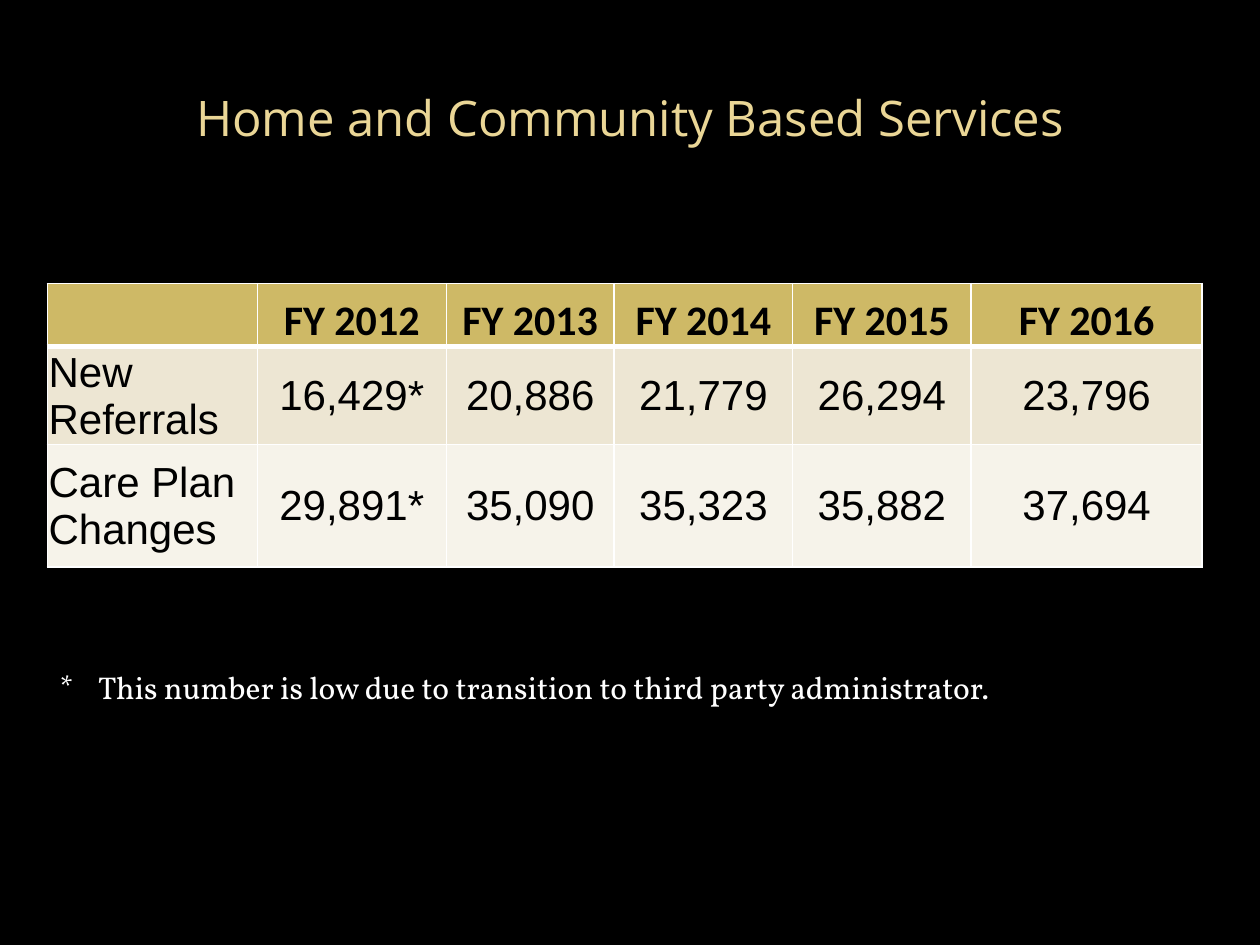
from dataclasses import dataclass

from lxml.etree import SubElement
from pptx import Presentation
from pptx.dml.color import RGBColor
from pptx.enum.text import MSO_ANCHOR, PP_ALIGN
from pptx.oxml.ns import qn
from pptx.util import Pt


@dataclass(frozen=True)
class Theme:
    background: str = "000000"
    title: str = "EAD696"
    note: str = "FFFFFF"
    border: str = "FFFFFF"
    cell_text: str = "000000"
    header_fill: str = "CEB966"
    title_size: int = 28
    table_size: int = 24
    note_size: int = 18


@dataclass(frozen=True)
class TextStyle:
    font: str
    size: int
    color: str
    bold: bool = False


@dataclass(frozen=True)
class Row:
    cells: tuple[str, ...]
    height: float
    fill: str
    style: TextStyle
    anchor: MSO_ANCHOR = MSO_ANCHOR.MIDDLE
    top_line: float = 1
    bottom_line: float = 1


THEME = Theme()
TITLE = TextStyle("Open Sans", THEME.title_size, THEME.title)
NOTE = TextStyle("Vollkorn", THEME.note_size, THEME.note)
HEADER = TextStyle("Calibri", THEME.table_size, THEME.cell_text, bold=True)
BODY = TextStyle("Arial", THEME.table_size, THEME.cell_text)

LEFT, WIDTH = 27, 660
NOTE_INDENT = 22
COLUMNS = (120, 108, 96, 102, 102, 132)
ROWS = (
    Row(("", "FY 2012", "FY 2013", "FY 2014", "FY 2015", "FY 2016"),
        36, THEME.header_fill, HEADER, MSO_ANCHOR.BOTTOM, bottom_line=3),
    Row(("New Referrals", "16,429*", "20,886", "21,779", "26,294", "23,796"),
        56, "EDE6D3", BODY, top_line=3),
    Row(("Care Plan Changes", "29,891*", "35,090", "35,323", "35,882", "37,694"),
        70, "F6F3EA", BODY),
)


def add_run(p, text: str, style: TextStyle) -> None:
    r = p.add_run()
    r.text = text
    r.font.name = style.font
    r.font.size = Pt(style.size)
    r.font.bold = style.bold
    r.font.color.rgb = RGBColor.from_string(style.color)


def add_text(s, left: float, top: float, width: float, height: float,
             text: str, style: TextStyle, align: PP_ALIGN, anchor: MSO_ANCHOR):
    sp = s.shapes.add_textbox(Pt(left), Pt(top), Pt(width), Pt(height))
    tf = sp.text_frame
    tf.word_wrap = True
    tf.vertical_anchor = anchor
    p = tf.paragraphs[0]
    p.alignment = align
    add_run(p, text, style)
    return p


def set_border(cell, side: str, width: float) -> None:
    ln = SubElement(cell._tc.get_or_add_tcPr(), qn(f"a:ln{side}"), w=str(Pt(width)))
    fill = SubElement(ln, qn("a:solidFill"))
    SubElement(fill, qn("a:srgbClr"), val=THEME.border)


def fill_cell(cell, text: str, row: Row, align: PP_ALIGN) -> None:
    # Borders precede the fill in the cell properties
    for side, width in (("L", 1), ("R", 1), ("T", row.top_line), ("B", row.bottom_line)):
        set_border(cell, side, width)
    cell.fill.solid()
    cell.fill.fore_color.rgb = RGBColor.from_string(row.fill)
    cell.vertical_anchor = row.anchor
    cell.margin_left = cell.margin_right = cell.margin_top = Pt(0.75)
    cell.margin_bottom = Pt(0)
    if text:
        p = cell.text_frame.paragraphs[0]
        p.alignment = align
        add_run(p, text, row.style)


def add_services_table(s, top: float) -> None:
    height = sum(row.height for row in ROWS)
    table = s.shapes.add_table(len(ROWS), len(COLUMNS), Pt(LEFT), Pt(top),
                               Pt(WIDTH), Pt(height)).table
    table.horz_banding = False
    for column, width in zip(table.columns, COLUMNS):
        column.width = Pt(width)
    for i, row in enumerate(ROWS):
        table.rows[i].height = Pt(row.height)
        for j, text in enumerate(row.cells):
            align = PP_ALIGN.CENTER if j else PP_ALIGN.LEFT
            fill_cell(table.cell(i, j), text, row, align)


def main() -> None:
    prs = Presentation()
    prs.slide_width, prs.slide_height = Pt(720), Pt(540)
    s = prs.slides.add_slide(prs.slide_layouts[6])
    s.background.fill.solid()
    s.background.fill.fore_color.rgb = RGBColor.from_string(THEME.background)

    # Services by fiscal year
    add_services_table(s, 162)

    # Title
    add_text(s, 0, 21.6, 720, 90, "Home and Community Based Services",
             TITLE, PP_ALIGN.CENTER, MSO_ANCHOR.MIDDLE)

    # Footnote with a hanging indent after the asterisk
    p = add_text(s, LEFT, 378, WIDTH, 72.7,
                 "*\tThis number is low due to transition to third party administrator.",
                 NOTE, PP_ALIGN.LEFT, MSO_ANCHOR.TOP)
    pPr = p._p.get_or_add_pPr()
    pPr.set("marL", str(Pt(NOTE_INDENT)))
    pPr.set("indent", str(-Pt(NOTE_INDENT)))

    prs.save("out.pptx")


if __name__ == "__main__":
    main()
